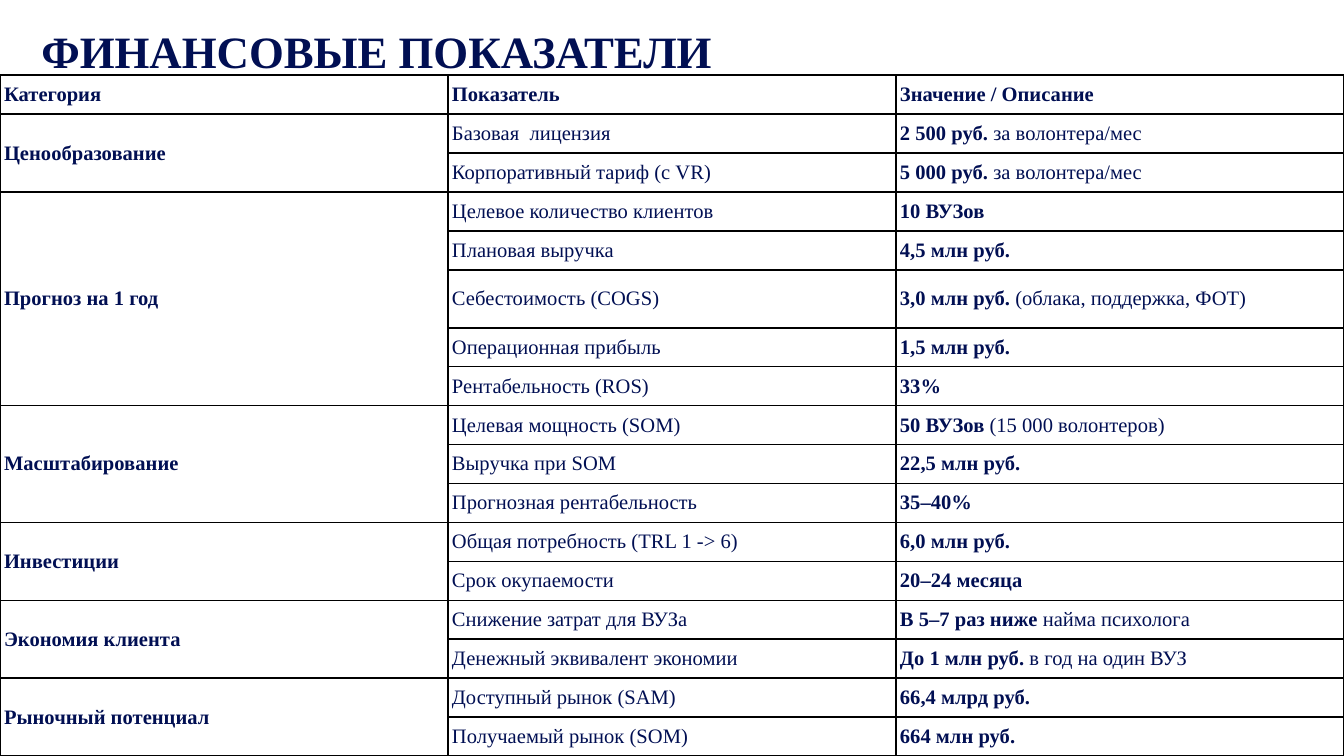
"""Build the slide with the table of financial indicators."""
from lxml import etree
from pptx import Presentation
from pptx import util as u
from pptx.dml.color import RGBColor
from pptx.enum import text
from pptx.oxml.ns import qn

TITLE = "ФИНАНСОВЫЕ ПОКАЗАТЕЛИ"
HEADINGS = ["Категория", "Показатель", "Значение / Описание"]
CATEGORIES = [
    ("Ценообразование", [
        ("Базовая  лицензия", "2 500 руб.", " за волонтера/мес"),
        ("Корпоративный тариф (с VR)", "5 000 руб.", " за волонтера/мес"),
    ]),
    ("Прогноз на 1 год", [
        ("Целевое количество клиентов", "10 ВУЗов", ""),
        ("Плановая выручка", "4,5 млн руб.", ""),
        ("Себестоимость (COGS)", "3,0 млн руб.", " (облака, поддержка, ФОТ)"),
        ("Операционная прибыль", "1,5 млн руб.", ""),
        ("Рентабельность (ROS)", "33%", ""),
    ]),
    ("Масштабирование", [
        ("Целевая мощность (SOM)", "50 ВУЗов", " (15 000 волонтеров)"),
        ("Выручка при SOM", "22,5 млн руб.", ""),
        ("Прогнозная рентабельность", "35–40%", ""),
    ]),
    ("Инвестиции", [
        ("Общая потребность (TRL 1 -> 6)", "6,0 млн руб.", ""),
        ("Срок окупаемости", "20–24 месяца", ""),
    ]),
    ("Экономия клиента", [
        ("Снижение затрат для ВУЗа", "В 5–7 раз ниже", " найма психолога"),
        ("Денежный эквивалент экономии", "До 1 млн руб.", " в год на один ВУЗ"),
    ]),
    ("Рыночный потенциал", [
        ("Доступный рынок (SAM)", "66,4 млрд руб.", ""),
        ("Получаемый рынок (SOM)", "664 млн руб.", ""),
    ]),
]
COLORS = {"ink": "010F53", "border": "000000"}
FONT = "Times New Roman"
WIDTH = 10
HEIGHT = WIDTH * 9 / 16
TABLE_TOP = 0.56
ROW_HEIGHT, TALL_ROW_HEIGHT, TALL_ROW = 0.29, 0.43, 5


def style_font(font, size):
    font.name, font.size = FONT, u.Pt(size)
    font.color.rgb = RGBColor.from_string(COLORS["ink"])


def add_borders(cell):
    properties = cell._tc.get_or_add_tcPr()
    for position, side in enumerate(("a:lnL", "a:lnR", "a:lnT", "a:lnB")):
        line = etree.Element(qn(side), w=str(u.Pt(1)))
        fill = etree.SubElement(line, qn("a:solidFill"))
        etree.SubElement(fill, qn("a:srgbClr"), val=COLORS["border"])
        properties.insert(position, line)


def write_cell(cell, bold="", plain=""):
    paragraph = cell.text_frame.paragraphs[0]
    style_font(paragraph.font, 11)
    for words, is_bold in ((bold, True), (plain, False)):
        if words:
            run = paragraph.add_run()
            run.text, run.font.bold = words, is_bold


def add_title(slide):
    title = slide.shapes.add_textbox(
        u.Inches(0.21), 0, u.Inches(11.5), u.Inches(0.8)).text_frame
    title.word_wrap = True
    title.vertical_anchor = text.MSO_ANCHOR.MIDDLE
    paragraph = title.paragraphs[0]
    paragraph.text, paragraph.line_spacing = TITLE, 0.9
    style_font(paragraph.font, 24)
    paragraph.font.bold = True


def add_indicators(slide):
    row_count = 1 + sum(len(indicators) for _, indicators in CATEGORIES)
    table_height = ROW_HEIGHT * (row_count - 1) + TALL_ROW_HEIGHT
    table = slide.shapes.add_table(
        row_count, len(HEADINGS), 0, u.Inches(TABLE_TOP),
        u.Inches(WIDTH), u.Inches(table_height)).table
    for number, row in enumerate(table.rows):
        row.height = u.Inches(TALL_ROW_HEIGHT if number == TALL_ROW else ROW_HEIGHT)
    for cell in table.iter_cells():
        cell.margin_left, cell.margin_right = u.Inches(0.03), u.Inches(0.04)
        cell.vertical_anchor = text.MSO_ANCHOR.MIDDLE
        cell.fill.background()
        add_borders(cell)
    for column, heading in enumerate(HEADINGS):
        write_cell(table.cell(0, column), heading)

    first = 1
    for category, indicators in CATEGORIES:
        last = first + len(indicators) - 1
        table.cell(first, 0).merge(table.cell(last, 0))
        write_cell(table.cell(first, 0), category)
        for row, (indicator, value, note) in enumerate(indicators, first):
            write_cell(table.cell(row, 1), plain=indicator)
            write_cell(table.cell(row, 2), value, note)
        first = last + 1


def main():
    deck = Presentation()
    deck.slide_width, deck.slide_height = u.Inches(WIDTH), u.Inches(HEIGHT)
    slide = deck.slides.add_slide(deck.slide_layouts[6])
    add_title(slide)
    add_indicators(slide)
    deck.save("out.pptx")


if __name__ == "__main__":
    main()
